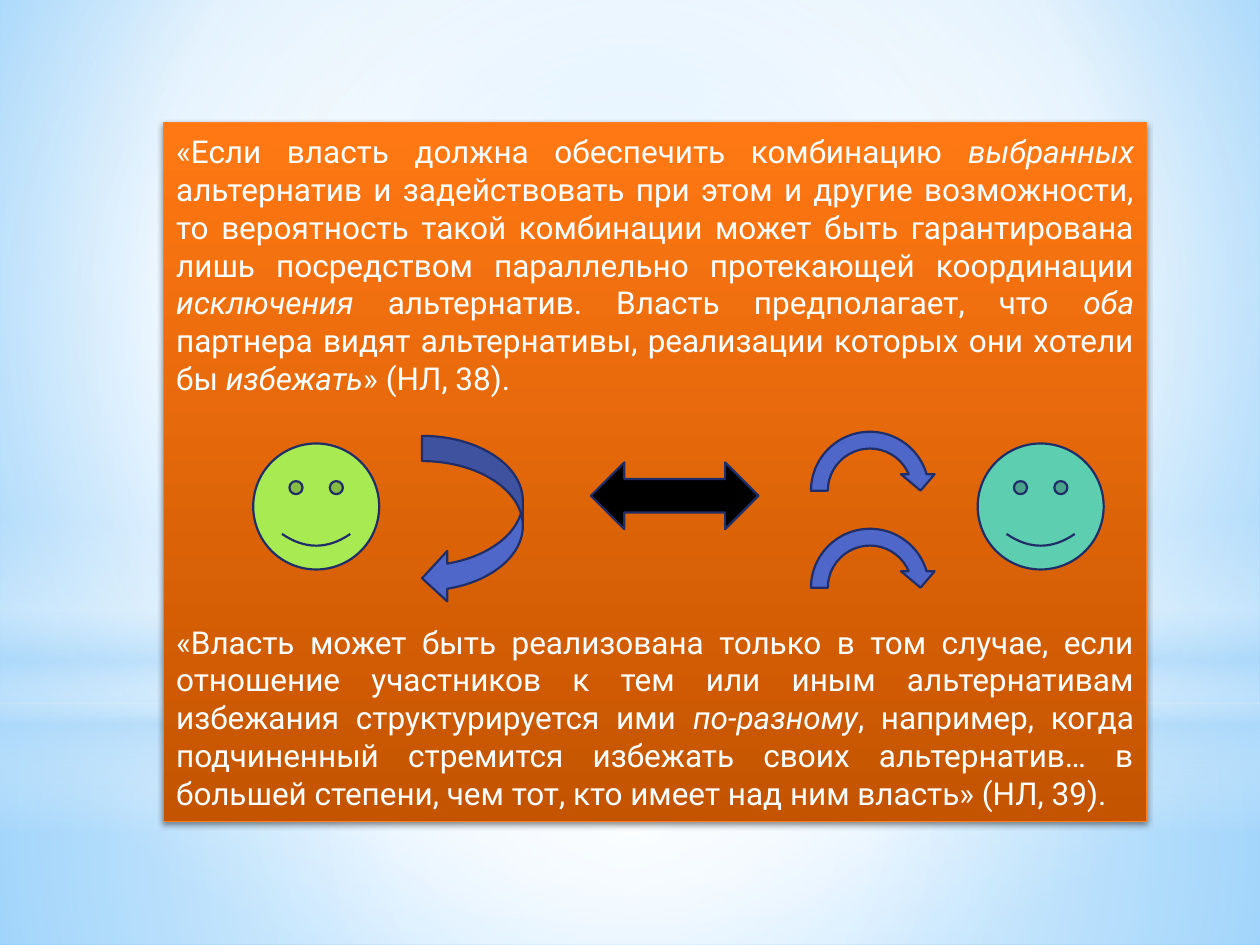
from pptx import Presentation
from pptx import util as u
from pptx.dml.color import RGBColor
from pptx.enum import shapes, text
from pptx.oxml import parse_xml
from pptx.oxml.ns import nsdecls, qn

FONT = "Roboto"
WHITE = RGBColor(0xFF, 0xFF, 0xFF)
BLACK = RGBColor(0x00, 0x00, 0x00)
SKY = RGBColor(0x9E, 0xD5, 0xFF)
DEEP_SKY = RGBColor(0x5B, 0xB9, 0xFF)
MIST = RGBColor(0xB4, 0xDC, 0xFA)
ORANGE = RGBColor(0xFF, 0x78, 0x13)
DARK_ORANGE = RGBColor(0xC4, 0x54, 0x00)
ORANGE_EDGE = RGBColor(0xFF, 0x80, 0x21)
LIME = RGBColor(0xA7, 0xEA, 0x52)
TEAL = RGBColor(0x5D, 0xCE, 0xAF)
BLUE = RGBColor(0x4E, 0x67, 0xC8)
NAVY = RGBColor(0x1F, 0x2E, 0x69)

CENTER = (50, 50, 50, 50)
SHAPE = shapes.MSO_SHAPE

POWER_QUOTE = (
    "«Если власть должна обеспечить комбинацию *выбранных* альтернатив и "
    "задействовать при этом и другие возможности, то вероятность такой комбинации "
    "может быть гарантирована лишь посредством параллельно протекающей координации "
    "*исключения* альтернатив. Власть предполагает, что *оба* партнера видят "
    "альтернативы, реализации которых они хотели бы *избежать*» (НЛ, 38)."
)
AVOIDANCE_QUOTE = (
    "«Власть может быть реализована только в том случае, если отношение участников "
    "к тем или иным альтернативам избежания структурируется ими *по-разному*, "
    "например, когда подчиненный стремится избежать своих альтернатив… в большей "
    "степени, чем тот, кто имеет над ним власть» (НЛ, 39)."
)


def write_text(paragraph, content, size=18, color=WHITE, space_before=0):
    """Fill a justified paragraph; words between asterisks are italic."""
    paragraph.alignment = text.PP_ALIGN.JUSTIFY
    paragraph.space_before = u.Pt(space_before)
    for index, part in enumerate(content.split("*")):
        run = paragraph.add_run()
        run.text = part
        run.font.name = FONT
        run.font.size = u.Pt(size)
        run.font.italic = index % 2 == 1
        run.font.color.rgb = color


def set_gradient(properties, stops, focus=None):
    """Swap an empty fill for a gradient: circular around focus, else downward.

    Each stop is (position %, colour, opacity %).
    """
    stop_xml = "".join(
        f'<a:gs pos="{position * 1000}"><a:srgbClr val="{color}">'
        f'<a:alpha val="{opacity * 1000}"/></a:srgbClr></a:gs>'
        for position, color, opacity in stops
    )
    if focus:
        sides = " ".join(f'{side}="{value * 1000}"' for side, value in zip("ltrb", focus))
        direction = f'<a:path path="circle"><a:fillToRect {sides}/></a:path>'
    else:
        direction = '<a:lin ang="5400000" scaled="0"/>'
    gradient = parse_xml(
        f'<a:gradFill {nsdecls("a")} rotWithShape="1">'
        f"<a:gsLst>{stop_xml}</a:gsLst>{direction}</a:gradFill>"
    )
    properties.replace(properties.find(qn("a:noFill")), gradient)


class SlideBuilder:
    def __init__(self, slide, outline=NAVY, outline_width=1.25):
        self.slide = slide
        self.outline = outline
        self.outline_width = outline_width

    def background(self, stops, focus):
        self.slide.background.fill.background()
        set_gradient(self.slide.element.find(".//" + qn("p:bgPr")), stops, focus)

    def _shape(self, kind, box):
        shape = self.slide.shapes.add_shape(kind, *map(u.Inches, box))
        shape.shadow.inherit = False
        return shape

    def glow(self, kind, box, stops, focus=None):
        shape = self._shape(kind, box)
        shape.fill.background()
        set_gradient(shape.element.spPr, stops, focus)
        shape.line.fill.background()

    def symbol(self, kind, box, color):
        shape = self._shape(kind, box)
        shape.fill.solid()
        shape.fill.fore_color.rgb = color
        shape.line.color.rgb = self.outline
        shape.line.width = u.Pt(self.outline_width)

    def quote_card(self, box, quotes, gap):
        shape = self._shape(SHAPE.RECTANGLE, box)
        shape.fill.background()
        set_gradient(shape.element.spPr, [(0, ORANGE, 100), (100, DARK_ORANGE, 100)])
        shape.line.color.rgb = ORANGE_EDGE
        shape.line.width = u.Pt(0.75)
        shape.element.spPr.find(qn("a:effectLst")).append(parse_xml(
            f'<a:outerShdw {nsdecls("a")} blurRad="{u.Pt(3.1)}" dist="{u.Pt(1.8)}" '
            f'dir="5400000" rotWithShape="0"><a:srgbClr val="{BLACK}">'
            '<a:alpha val="45000"/></a:srgbClr></a:outerShdw>'
        ))
        frame = shape.text_frame
        frame.word_wrap = True
        frame.vertical_anchor = text.MSO_ANCHOR.MIDDLE
        for index, quote in enumerate(quotes):
            paragraph = frame.add_paragraph() if index else frame.paragraphs[0]
            write_text(paragraph, quote, space_before=gap if index else 0)


def main():
    presentation = Presentation()
    presentation.slide_width = u.Inches(10)
    presentation.slide_height = u.Inches(7.5)
    slide = presentation.slides.add_slide(presentation.slide_layouts[6])
    builder = SlideBuilder(slide)

    builder.background([(0, SKY, 100), (60, WHITE, 100), (100, DEEP_SKY, 100)],
                       (20, 10, 20, 60))
    builder.glow(SHAPE.RECTANGLE, (0, 5.58, 10, 1.92),
                 [(0, WHITE, 91), (37, WHITE, 76), (100, MIST, 79)], CENTER)
    builder.glow(SHAPE.RECTANGLE, (0, 0, 10, 5.58),
                 [(0, WHITE, 89), (48, WHITE, 62), (100, MIST, 79)], CENTER)
    builder.glow(SHAPE.RECTANGLE, (0, 4.12, 10, 2.5),
                 [(0, WHITE, 0), (29, WHITE, 30), (45, MIST, 40),
                  (55, WHITE, 26), (65, MIST, 60), (100, WHITE, 0)])
    builder.glow(SHAPE.OVAL, (0, 1.75, 10, 5.58),
                 [(0, WHITE, 100), (56, WHITE, 0)], CENTER)

    builder.quote_card((1.3, 0.97, 7.8, 5.55), [POWER_QUOTE, AVOIDANCE_QUOTE], gap=129)

    for left, color in ((2.01, LIME), (7.76, TEAL)):
        builder.symbol(SHAPE.SMILEY_FACE, (left, 3.52, 1, 1), color)
    builder.symbol(SHAPE.LEFT_RIGHT_ARROW, (4.69, 3.67, 1.33, 0.53), BLACK)
    for top in (4.13, 3.36):
        builder.symbol(SHAPE.CIRCULAR_ARROW, (6.37, top, 1.07, 1.07), BLUE)
    builder.symbol(SHAPE.CURVED_LEFT_ARROW, (3.35, 3.46, 0.8, 1.33), BLUE)

    presentation.save("out.pptx")


if __name__ == "__main__":
    main()
